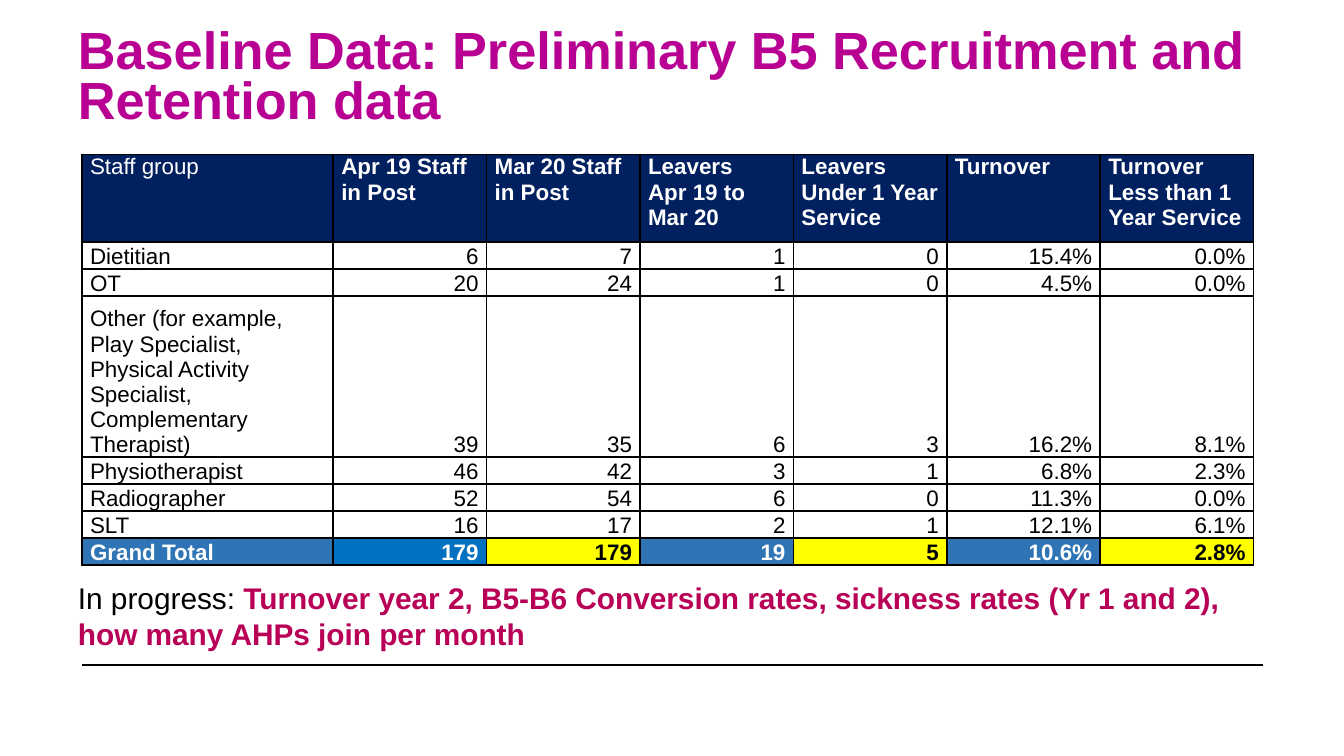
import pptx
import pptx.dml.color
import pptx.enum.shapes
import pptx.enum.text
import pptx.oxml
import pptx.oxml.ns
import pptx.util
from dataclasses import dataclass

Inches = pptx.util.Inches
Pt = pptx.util.Pt
ALIGN = pptx.enum.text.PP_ALIGN
ANCHOR = pptx.enum.text.MSO_ANCHOR


@dataclass(frozen=True)
class Theme:
    font: str = "Arial"
    title_size: float = 28
    note_size: float = 16
    table_size: float = 12
    title: str = "B80093"
    accent: str = "B80056"
    black: str = "000000"
    white: str = "FFFFFF"
    header: str = "002060"
    total: str = "2F75B5"
    total_start: str = "0070C0"
    highlight: str = "FFFF00"
    rule_width: float = 1.25
    border_width: float = 1


HEADERS = [
    "Staff group", "Apr 19 Staff in Post", "Mar 20 Staff in Post",
    "Leavers\nApr 19 to Mar 20", "Leavers Under 1 Year Service",
    "Turnover", "Turnover Less than 1 Year Service",
]
STAFF_ROWS = [
    ["Dietitian", "6", "7", "1", "0", "15.4%", "0.0%"],
    ["OT", "20", "24", "1", "0", "4.5%", "0.0%"],
    ["Other (for example, Play Specialist, Physical Activity Specialist, "
     "Complementary Therapist)", "39", "35", "6", "3", "16.2%", "8.1%"],
    ["Physiotherapist", "46", "42", "3", "1", "6.8%", "2.3%"],
    ["Radiographer", "52", "54", "6", "0", "11.3%", "0.0%"],
    ["SLT", "16", "17", "2", "1", "12.1%", "6.1%"],
]
TOTALS = ["Grand Total", "179", "179", "19", "5", "10.6%", "2.8%"]
ROW_HEIGHTS = [0.65, 0.2, 0.2, 1.2, 0.2, 0.2, 0.2, 0.2]
TABLE_WIDTH = 8.72
NAME_WIDTH = 1.87


class SlideBuilder:
    def __init__(self, slide, theme):
        self.slide = slide
        self.theme = theme

    def color(self, value):
        return pptx.dml.color.RGBColor.from_string(value)

    def add_run(self, paragraph, text, size, color, bold=False):
        """Add styled text; a newline becomes a line break."""
        for index, line in enumerate(text.split("\n")):
            if index:
                paragraph.add_line_break()
            run = paragraph.add_run()
            run.text = line
            run.font.name = self.theme.font
            run.font.size = Pt(size)
            run.font.bold = bold
            run.font.color.rgb = self.color(color)

    def add_text(self, left, top, width, height, runs, size, line_spacing):
        """Add one paragraph of (text, color, bold) runs."""
        shape = self.slide.shapes.add_textbox(
            Inches(left), Inches(top), Inches(width), Inches(height))
        frame = shape.text_frame
        frame.word_wrap = True
        frame.margin_left = frame.margin_right = 0
        frame.margin_top = frame.margin_bottom = 0
        paragraph = frame.paragraphs[0]
        paragraph.line_spacing = Pt(line_spacing)
        for text, color, bold in runs:
            self.add_run(paragraph, text, size, color, bold)

    def add_rule(self, left, right, y):
        connector = self.slide.shapes.add_connector(
            pptx.enum.shapes.MSO_CONNECTOR.STRAIGHT,
            Inches(left), Inches(y), Inches(right), Inches(y))
        connector.line.color.rgb = self.color(self.theme.black)
        connector.line.width = Pt(self.theme.rule_width)
        properties = connector._element.spPr
        properties.append(pptx.oxml.parse_xml(
            f"<a:effectLst {pptx.oxml.ns.nsdecls('a')}/>"))

    def add_borders(self, cell):
        properties = cell._tc.get_or_add_tcPr()
        width = Pt(self.theme.border_width)
        for position, side in enumerate(("lnL", "lnR", "lnT", "lnB")):
            properties.insert(position, pptx.oxml.parse_xml(
                f'<a:{side} {pptx.oxml.ns.nsdecls("a")} w="{width}"><a:solidFill>'
                f'<a:srgbClr val="{self.theme.black}"/></a:solidFill></a:{side}>'))

    def cell_style(self, row, column, last_row):
        """Return fill, text color and boldness for a table position."""
        theme = self.theme
        if row == 0:
            return theme.header, theme.white, column > 0
        if row < last_row:
            return None, theme.black, False
        if column and column % 2 == 0:
            return theme.highlight, theme.black, True
        fill = theme.total_start if column == 1 else theme.total
        return fill, theme.white, True

    def fill_cell(self, cell, text, row, column, last_row):
        fill, color, bold = self.cell_style(row, column, last_row)
        cell.margin_left = cell.margin_right = Inches(0.06)
        cell.margin_top = cell.margin_bottom = 0
        cell.vertical_anchor = ANCHOR.BOTTOM if row else ANCHOR.TOP
        if fill:
            cell.fill.solid()
            cell.fill.fore_color.rgb = self.color(fill)
        else:
            cell.fill.background()
        self.add_borders(cell)
        paragraph = cell.text_frame.paragraphs[0]
        paragraph.alignment = ALIGN.RIGHT if row and column else ALIGN.LEFT
        self.add_run(paragraph, text, self.theme.table_size, color, bold)

    def add_table(self, left, top, rows):
        table = self.slide.shapes.add_table(
            len(rows), len(rows[0]), Inches(left), Inches(top),
            Inches(TABLE_WIDTH), Inches(sum(ROW_HEIGHTS))).table
        value_width = (TABLE_WIDTH - NAME_WIDTH) / (len(rows[0]) - 1)
        for index, column in enumerate(table.columns):
            column.width = Inches(value_width if index else NAME_WIDTH)
        for row, height in zip(table.rows, ROW_HEIGHTS):
            row.height = Inches(height)
        for row_index, values in enumerate(rows):
            for column_index, text in enumerate(values):
                self.fill_cell(table.cell(row_index, column_index), text,
                               row_index, column_index, len(rows) - 1)


def main():
    presentation = pptx.Presentation()
    presentation.slide_width = Inches(10)
    presentation.slide_height = Inches(10 * 9 / 16)
    slide = presentation.slides.add_slide(presentation.slide_layouts[6])
    theme = Theme()
    builder = SlideBuilder(slide, theme)

    builder.add_rule(0.61, 9.4, 4.95)
    builder.add_text(
        0.58, 0.22, 8.85, 0.74,
        [("Baseline Data: Preliminary B5 Recruitment and Retention data",
          theme.title, True)],
        theme.title_size, 27)
    builder.add_text(
        0.58, 4.31, 8.65, 0.58,
        [("In progress:", theme.black, False),
         (" Turnover year 2, B5-B6 Conversion rates, sickness rates "
          "(Yr 1 and 2), how many AHPs join per month", theme.accent, True)],
        theme.note_size, 19.3)
    builder.add_table(0.61, 1.15, [HEADERS, *STAFF_ROWS, TOTALS])
    presentation.save("out.pptx")


if __name__ == "__main__":
    main()
